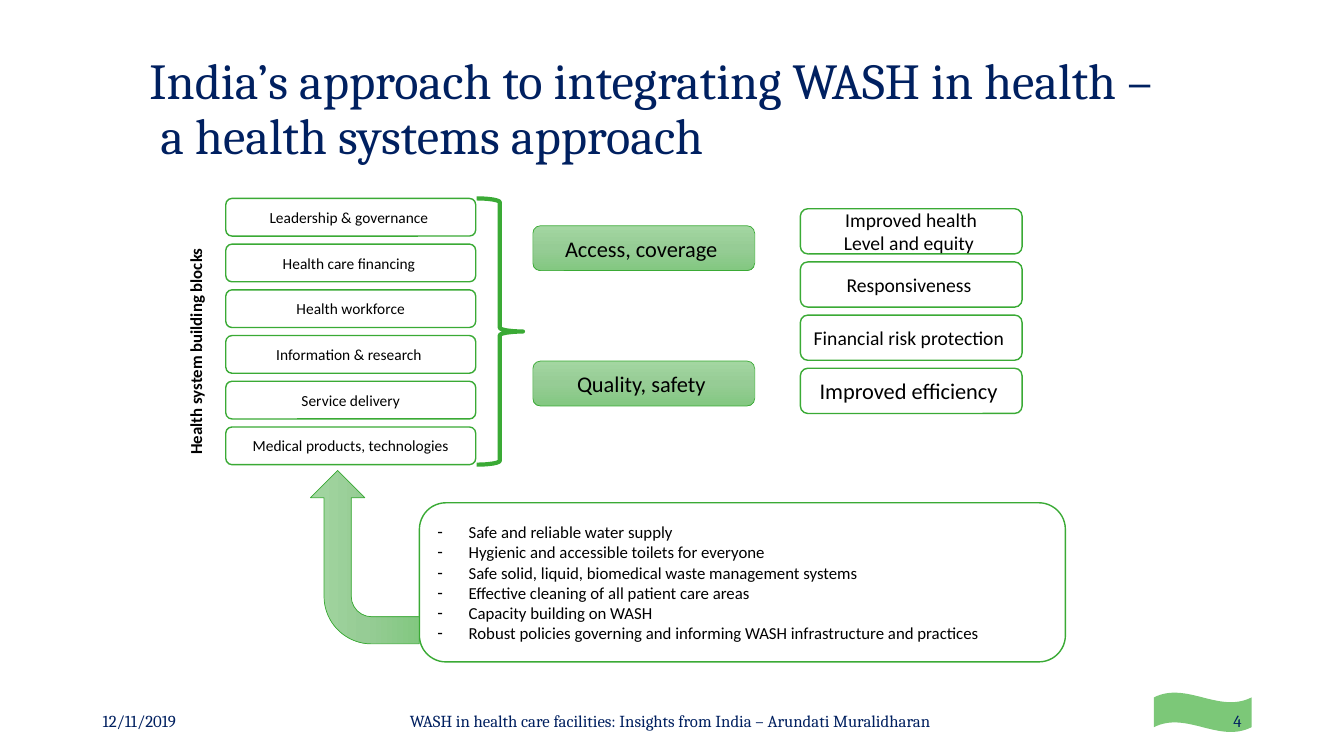
from copy import deepcopy

from lxml.etree import SubElement
from pptx import Presentation
from pptx.dml.color import RGBColor
from pptx.enum.shapes import MSO_SHAPE
from pptx.enum.text import MSO_ANCHOR, MSO_AUTO_SIZE, PP_ALIGN
from pptx.oxml.ns import qn
from pptx.util import Cm, Pt

HUES = {
    "navy": "002060", "black": "000000", "white": "FFFFFF", "green": "3AAA35",
    "light": "A3D6A1", "mid": "96CC95", "deep": "83C881", "wave": "7CC878",
}
BLOCKS = [
    "Leadership & governance ", "Health care financing ", "Health workforce",
    "Information & research ", "Service delivery", "Medical products, technologies",
]
OUTPUTS = ["Access, coverage ", "Quality, safety "]
GOALS = [
    ("Improved health\nLevel and equity ", 14), ("Responsiveness ", 14),
    ("Financial risk protection ", 14), ("Improved efficiency ", 16),
]
ACTIONS = [
    "Safe and reliable water supply",
    "Hygienic and accessible toilets for everyone",
    "Safe solid, liquid, biomedical waste management systems",
    "Effective cleaning of all patient care areas",
    "Capacity building on WASH",
    "Robust policies governing and informing WASH infrastructure and practices",
]
SERIF = {"name": "Cambria", "hue": "navy"}
SANS = {"name": "Calibri", "hue": "black"}


def color(key):
    return RGBColor.from_string(HUES[key])


def cms(*box):
    return [Cm(n) for n in box]


def place(shape, *box):
    for name, value in zip(("left", "top", "width", "height"), cms(*box)):
        setattr(shape, name, value)


def style(frame, look, align=PP_ALIGN.LEFT, anchor=MSO_ANCHOR.MIDDLE):
    """Format every paragraph of a text frame from a dict of font values."""
    frame.word_wrap = True
    frame.vertical_anchor = anchor
    for para in frame.paragraphs:
        para.alignment = align
        for name, value in look.items():
            if name == "hue":
                para.font.color.rgb = color(value)
            else:
                setattr(para.font, name, value)


def blend(fill):
    """Fill from light at the top to deep at the bottom."""
    fill.gradient()
    fill.gradient_angle = 270
    first, last = fill.gradient_stops
    for stop, key, at in ((first, "light", 0), (last, "deep", 1)):
        stop.color.rgb = color(key)
        stop.position = at
    node = fill._xPr.find(qn("a:gradFill")).find(qn("a:gsLst"))
    half = deepcopy(node[0])
    half.set("pos", "50000")
    half[0].set("val", HUES["mid"])
    node.insert(1, half)


def draw(slide, kind, box, fill="white", width=1):
    shape = slide.shapes.add_shape(kind, *cms(*box))
    shape.shadow.inherit = False
    if fill == "blend":
        blend(shape.fill)
    elif fill:
        shape.fill.solid()
        shape.fill.fore_color.rgb = color(fill)
    else:
        shape.fill.background()
    if width:
        shape.line.color.rgb = color("green")
        shape.line.width = Pt(width)
    else:
        shape.line.fill.background()
    return shape


def card(slide, box, text, size, **form):
    shape = draw(slide, MSO_SHAPE.ROUNDED_RECTANGLE, box, **form)
    shape.text_frame.text = text
    style(shape.text_frame, SANS | {"size": Pt(size)}, PP_ALIGN.CENTER)


def label(slide, box, text, look, **form):
    shape = slide.shapes.add_textbox(*cms(*box))
    shape.text_frame.text = text
    style(shape.text_frame, look, **form)
    return shape


def stack(slide, x, y, w, h, items, tall, **form):
    """Spread cards evenly over the height of the box."""
    step = (h - tall) / (len(items) - 1)
    for i, (text, size) in enumerate(items):
        card(slide, (x, y + i * step, w, tall), text, size, **form)


def title(slide, *box):
    head = slide.shapes.title
    place(head, *box)
    head.text_frame.text = (
        "India’s approach to integrating WASH in health – \v a health systems approach")
    style(head.text_frame, SERIF | {"size": Pt(36)})
    head.text_frame.auto_size = MSO_AUTO_SIZE.NONE
    head.text_frame.paragraphs[0].line_spacing = 0.9


def system(slide, x, y, w, h):
    """Building blocks on the left, outputs in the middle, goals on the right."""
    long = 6.71
    side = label(slide, (x - 2.57, y + h / 2 - 0.38, long, 0.76),
                 "Health system building blocks",
                 SANS | {"size": Pt(12), "bold": True}, anchor=MSO_ANCHOR.TOP)
    side.rotation = 270
    stack(slide, x + 1.55, y, 6.3, h, [(text, 11) for text in BLOCKS], 0.95)
    draw(slide, MSO_SHAPE.RIGHT_BRACE, (x + 7.87, y, 1.17, h), None, 3)
    stack(slide, x + 9.29, y + 0.69, 5.59, 4.54,
          [(text, 16) for text in OUTPUTS], 1.13, fill="blend", width=0.5)
    stack(slide, x + w - 5.59, y + 0.26, 5.59, 5.16, GOALS, 1.14)


def actions(slide, x, y, w, h):
    """Listed actions in a panel, with an arrow up to the building blocks."""
    panel = (x + 2.74, y, w - 2.74, h)
    draw(slide, MSO_SHAPE.ROUNDED_RECTANGLE, panel)
    body = slide.placeholders[1]
    place(body, *panel)
    body.element.getparent().append(body.element)
    frame = body.text_frame
    frame.text = "\n".join(ACTIONS)
    frame.auto_size = MSO_AUTO_SIZE.NONE
    frame.margin_left = frame.margin_right = Cm(0.45)
    for para in frame.paragraphs:
        props = para._p.get_or_add_pPr()
        props.set("marL", str(Cm(0.79)))
        props.set("indent", str(-Cm(0.79)))
        SubElement(props, qn("a:buChar"), char="-")
        para.space_before = Pt(0)
    style(frame, SANS | {"size": Pt(12)})
    arrow = draw(slide, MSO_SHAPE.BENT_ARROW,
                 (x - 0.82, y, 4.37, 2.74), "blend", 0.5)
    arrow.rotation = 270


def footer(slide, x, y, w, h):
    draw(slide, MSO_SHAPE.WAVE, (x + w - 2.46, y - 0.2, 2.46, 1), "wave", 0)
    parts = [
        (x + 3.68, 21.84, PP_ALIGN.CENTER,
         "WASH in health care facilities: Insights from India – Arundati Muralidharan "),
        (x, 3.33, PP_ALIGN.LEFT, "12/11/2019"),
        (x + w - 2.84, 2.84, PP_ALIGN.RIGHT, "4"),
    ]
    for left, wide, align, text in parts:
        label(slide, (left, y, wide, h), text,
              SERIF | {"size": Pt(12)}, align=align)


def main():
    deck = Presentation()
    deck.slide_width, deck.slide_height = cms(33.87, 19.05)
    slide = deck.slides.add_slide(deck.slide_layouts[1])
    title(slide, 3.51, 1.02, 28.02, 3.53)
    footer(slide, 2.34, 17.65, 29.2, 1.02)
    system(slide, 4.14, 5, 21.62, 6.71)
    actions(slide, 7.83, 12.67, 19.02, 4.01)
    deck.save("out.pptx")


if __name__ == "__main__":
    main()
